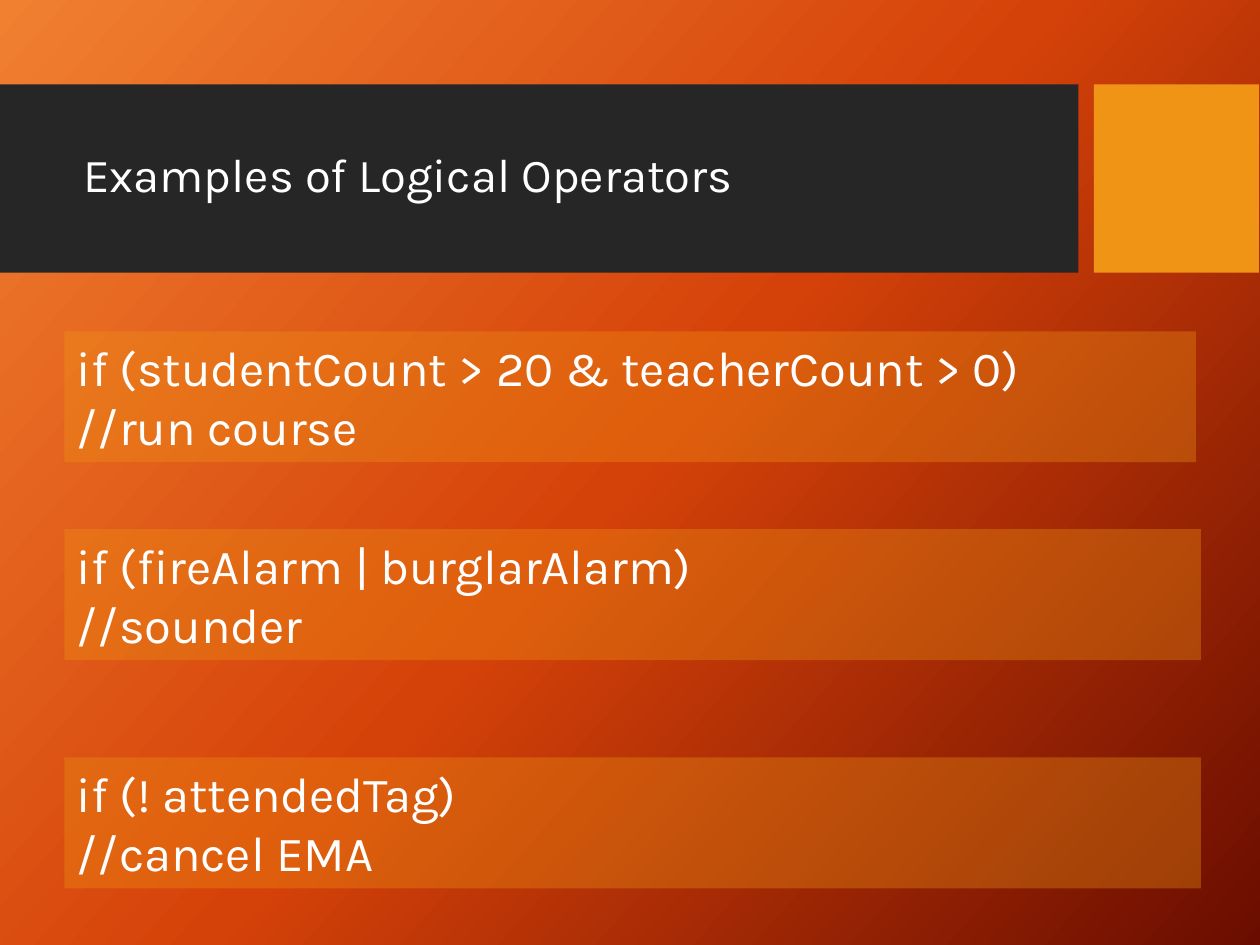
"""Build the slide showing examples of logical operators."""
import copy

import pptx
import pptx.dml.color
import pptx.enum.shapes
import pptx.enum.text
import pptx.oxml
import pptx.oxml.ns
import pptx.util
from pptx.util import Cm

THEME = {
    "font": "Karla",
    "title_size": pptx.util.Pt(27),
    "code_size": pptx.util.Pt(28),
    "text": pptx.dml.color.RGBColor.from_string("FFFFFF"),
    "band": pptx.dml.color.RGBColor.from_string("262626"),
    "accent": pptx.dml.color.RGBColor.from_string("F09415"),
    "gradient": [
        (0, pptx.dml.color.RGBColor.from_string("F18031")),
        (0.5, pptx.dml.color.RGBColor.from_string("D54209")),
        (1, pptx.dml.color.RGBColor.from_string("6A0D00")),
    ],
    "panel_alpha": 35000,
}


def add_block(slide, left, top, width, height, color):
    block = slide.shapes.add_shape(
        pptx.enum.shapes.MSO_SHAPE.RECTANGLE, left, top, width, height
    )
    block.shadow.inherit = False
    block.fill.solid()
    block.fill.fore_color.rgb = color
    block.line.fill.background()
    return block


def write_lines(frame, lines, frame_format, paragraph_format, size):
    for name, value in frame_format.items():
        setattr(frame, name, value)
    frame.text = "\n".join(lines)
    for paragraph in frame.paragraphs:
        for name, value in paragraph_format.items():
            setattr(paragraph, name, value)
        for name, value in {"name": THEME["font"], "size": size}.items():
            setattr(paragraph.runs[0].font, name, value)
        paragraph.runs[0].font.color.rgb = THEME["text"]


deck = pptx.Presentation()
deck.slide_width, deck.slide_height = Cm(25.4), Cm(19.05)
slide = deck.slides.add_slide(deck.slide_layouts[5])

backdrop = slide.background.fill
backdrop.gradient()
backdrop.gradient_angle = 318
stop_list = slide.element.find(".//" + pptx.oxml.ns.qn("a:gsLst"))
stop_list.append(copy.deepcopy(stop_list[0]))
for stop, (position, color) in zip(backdrop.gradient_stops, THEME["gradient"]):
    stop.position = position
    stop.color.rgb = color

add_block(slide, 0, Cm(1.7), Cm(21.74), Cm(3.8), THEME["band"])
add_block(slide, Cm(22.05), Cm(1.7), Cm(3.33), Cm(3.8), THEME["accent"])

heading = slide.shapes.title
heading_place = {"left": Cm(1.42), "top": Cm(2.08), "width": Cm(20.04), "height": Cm(3)}
for name, value in heading_place.items():
    setattr(heading, name, value)
write_lines(
    heading.text_frame,
    ["Examples of Logical Operators"],
    {
        "word_wrap": True,
        "vertical_anchor": pptx.enum.text.MSO_ANCHOR.MIDDLE,
        "auto_size": pptx.enum.text.MSO_AUTO_SIZE.NONE,
    },
    {"alignment": pptx.enum.text.PP_ALIGN.LEFT, "line_spacing": 0.9},
    THEME["title_size"],
)
slide.shapes.element.append(heading.element)

examples = [
    (6.68, 22.81, ["if (studentCount > 20 & teacherCount > 0)", "//run course"]),
    (10.67, 22.91, ["if (fireAlarm | burglarAlarm)", "//sounder"]),
    (15.27, 22.91, ["if (! attendedTag)", "//cancel EMA"]),
]
for top, width, code_lines in examples:
    example = add_block(slide, Cm(1.3), Cm(top), Cm(width), Cm(2.64), THEME["accent"])
    tint = example.element.spPr.find(".//" + pptx.oxml.ns.qn("a:srgbClr"))
    alpha = pptx.oxml.parse_xml(
        f'<a:alpha {pptx.oxml.ns.nsdecls("a")} val="{THEME["panel_alpha"]}"/>'
    )
    tint.append(alpha)
    write_lines(
        example.text_frame,
        code_lines,
        {
            "word_wrap": True,
            "vertical_anchor": pptx.enum.text.MSO_ANCHOR.TOP,
            "auto_size": pptx.enum.text.MSO_AUTO_SIZE.SHAPE_TO_FIT_TEXT,
        },
        {"alignment": pptx.enum.text.PP_ALIGN.LEFT},
        THEME["code_size"],
    )

deck.save("out.pptx")
